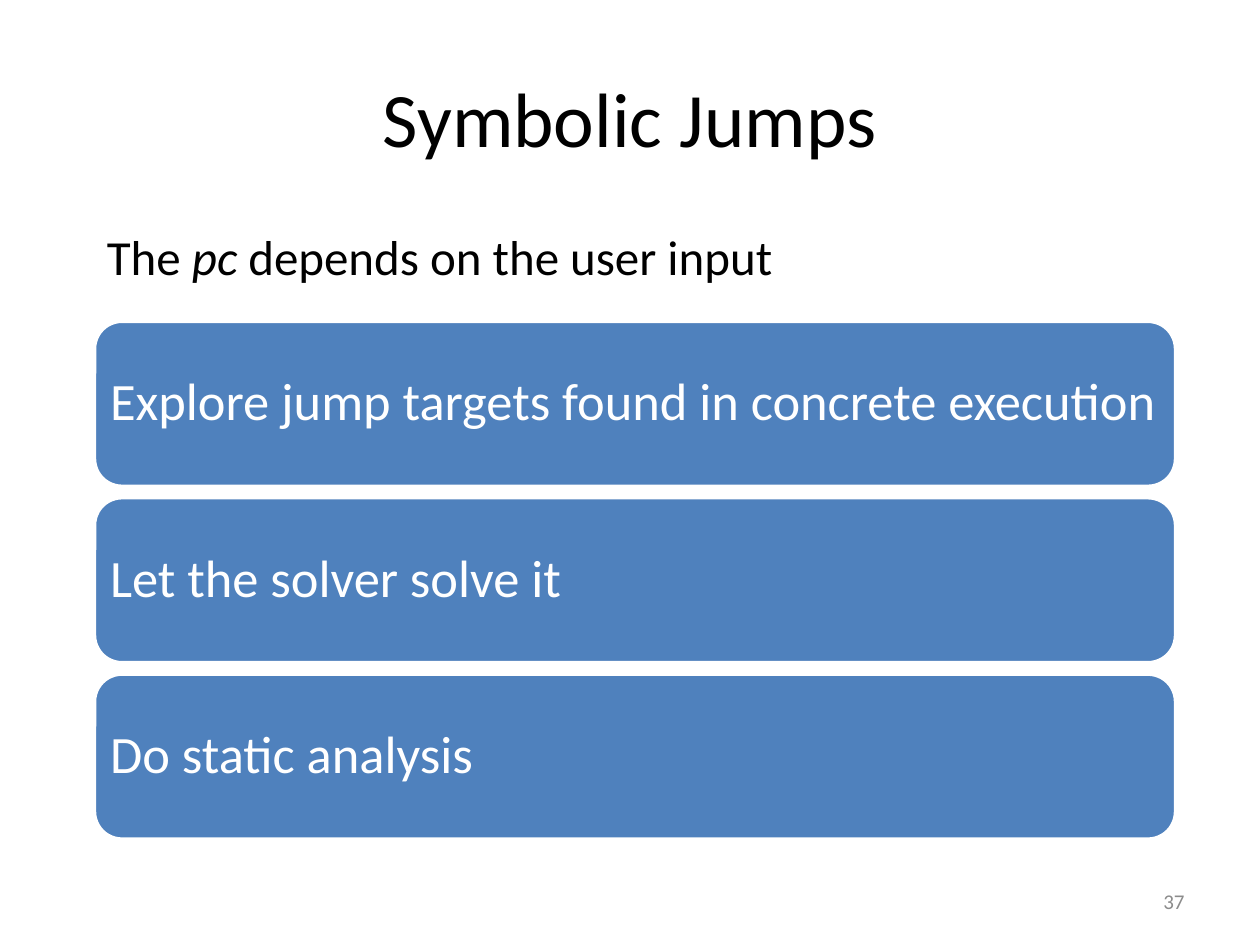
from dataclasses import dataclass

from pptx import Presentation
from pptx.dml.color import RGBColor
from pptx.enum.shapes import MSO_SHAPE
from pptx.enum.text import MSO_ANCHOR, PP_ALIGN
from pptx.util import Inches, Pt

COLORS = {"text": "000000", "bar": "4F81BD", "white": "FFFFFF", "number": "8C8C8C"}
FONT = "Calibri"


@dataclass
class Area:
    left: float
    top: float
    width: float
    height: float

    def lengths(self) -> list:
        return [Inches(v) for v in (self.left, self.top, self.width, self.height)]


FIRST_BAR = Area(0.75, 2.55, 8.58, 1.31)
BAR_STEP = 1.4
STRATEGIES = [
    "Explore jump targets found in concrete execution",
    "Let the solver solve it",
    "Do static analysis",
]


def color(name: str) -> RGBColor:
    return RGBColor.from_string(COLORS[name])


def format_paragraph(paragraph, size: float, color_name: str, align=PP_ALIGN.LEFT) -> None:
    paragraph.alignment = align
    paragraph.font.name = FONT
    paragraph.font.size = Pt(size)
    paragraph.font.color.rgb = color(color_name)


def add_text_box(page, area: Area, anchor=MSO_ANCHOR.TOP):
    """Add a wrapping text box and return its first paragraph."""
    frame = page.shapes.add_textbox(*area.lengths()).text_frame
    frame.word_wrap = True
    frame.vertical_anchor = anchor
    return frame.paragraphs[0]


def add_bar(page, area: Area, text: str) -> None:
    bar = page.shapes.add_shape(MSO_SHAPE.ROUNDED_RECTANGLE, *area.lengths())
    bar.shadow.inherit = False
    bar.fill.solid()
    bar.fill.fore_color.rgb = color("bar")
    bar.line.color.rgb = color("white")
    bar.line.width = Pt(2)
    frame = bar.text_frame
    frame.word_wrap = True
    frame.vertical_anchor = MSO_ANCHOR.MIDDLE
    # The rounded corners already inset the text by about 0.06 inches
    frame.margin_left = frame.margin_right = Inches(0.06)
    paragraph = frame.paragraphs[0]
    paragraph.text = text
    paragraph.line_spacing = 0.9
    format_paragraph(paragraph, 30, "white")


def main() -> None:
    deck = Presentation()
    deck.slide_width, deck.slide_height = Inches(10), Inches(7.5)
    page = deck.slides.add_slide(deck.slide_layouts[5])

    # Title
    title = page.shapes.title
    title.left, title.top, title.width, title.height = Area(0.5, 0.3, 9, 1.25).lengths()
    title.text_frame.text = "Symbolic Jumps"
    title.text_frame.vertical_anchor = MSO_ANCHOR.MIDDLE
    format_paragraph(title.text_frame.paragraphs[0], 44, "text", PP_ALIGN.CENTER)

    # Strategy bars
    for index, strategy in enumerate(STRATEGIES):
        top = FIRST_BAR.top + index * BAR_STEP
        add_bar(page, Area(FIRST_BAR.left, top, FIRST_BAR.width, FIRST_BAR.height), strategy)

    # Slide number
    number = add_text_box(page, Area(7.17, 6.95, 2.33, 0.4), MSO_ANCHOR.MIDDLE)
    number.text = "37"
    format_paragraph(number, 12, "number", PP_ALIGN.RIGHT)

    # Problem statement
    problem = add_text_box(page, Area(0.75, 1.75, 5.75, 1.04))
    format_paragraph(problem, 28, "text")
    for text, italic in [("The ", False), ("pc", True), (" depends on the user input", False)]:
        span = problem.add_run()
        span.text = text
        span.font.italic = italic

    deck.save("out.pptx")


if __name__ == "__main__":
    main()
